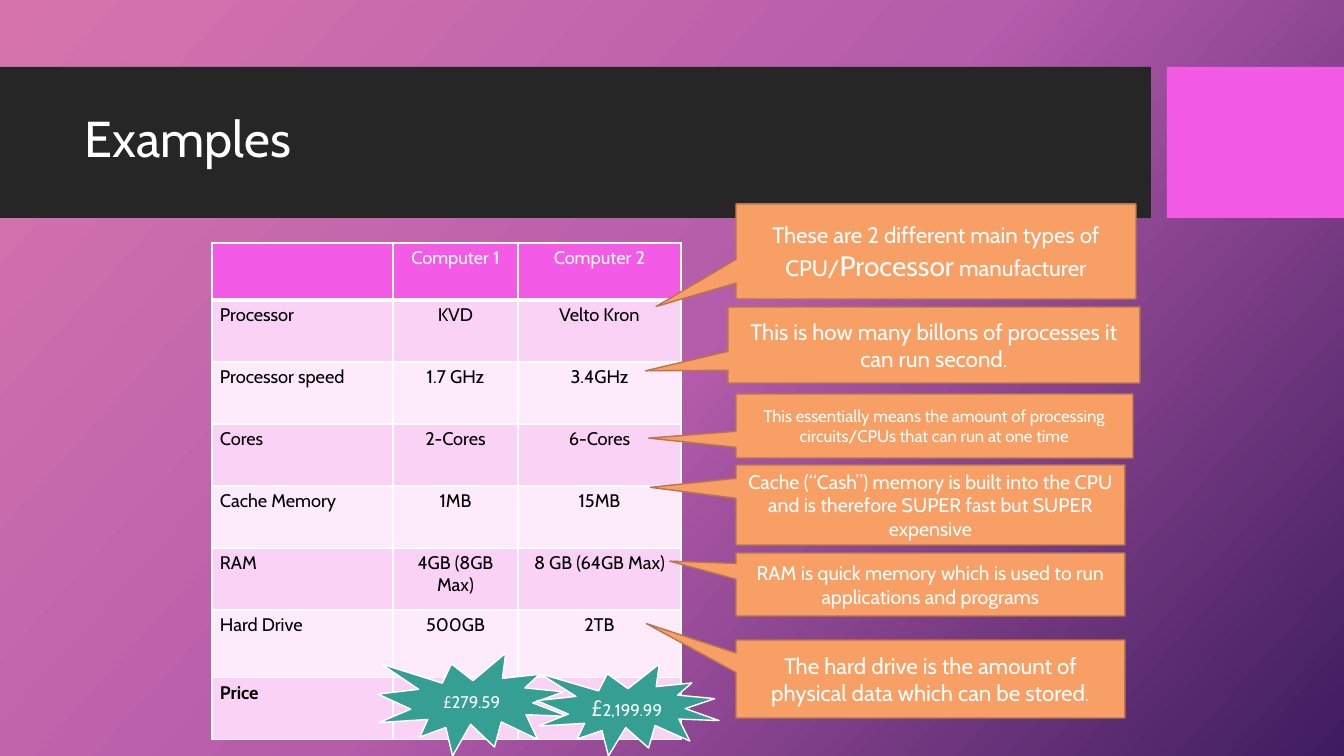
from copy import deepcopy
from dataclasses import dataclass

from lxml import etree
from pptx import Presentation
from pptx import util as u
from pptx.dml.color import RGBColor
from pptx.enum import shapes, text
from pptx.oxml.ns import qn

PX = 914400 / 100.8


@dataclass(frozen=True)
class Theme:
    font: str = "Cabin"
    white: str = "FFFFFF"
    black: str = "000000"
    band: str = "262626"
    pink: str = "F35AE6"
    row_dark: str = "FAD2F5"
    row_light: str = "FDEAFA"
    teal: str = "359F94"
    orange: str = "F89F65"
    orange_line: str = "B7764B"
    backdrop: tuple = ((0, "D774AD"), (0.5, "B55CAB"), (1, "3E1C5F"))
    title: int = 36
    accent: int = 20
    large: int = 16
    medium: int = 14
    table: int = 13
    small: int = 12


T = Theme()

ROWS = [
    ("", "Computer 1", "Computer 2"),
    ("Processor", "KVD", "Velto Kron"),
    ("Processor speed", "1.7 GHz", "3.4GHz"),
    ("Cores", "2-Cores", "6-Cores"),
    ("Cache Memory", "1MB", "15MB"),
    ("RAM", "4GB (8GB Max)", "8 GB (64GB Max)"),
    ("Hard Drive", "500GB", "2TB"),
    ("Price", "", ""),
]
COL_WIDTHS = [181, 125, 163]
ROW_HEIGHTS = [57] + [62] * 5 + [68, 62]

PRICES = [
    ((378, 653, 190, 103), [("£279.59", T.small)]),
    ((537, 664, 182, 92), [("£", T.large), ("2,199.99", T.small)]),
]

CALLOUTS = [
    ((736, 204, 400, 95), (-0.7, 0.58),
     [("These are 2 different main types of CPU/", T.large),
      ("Processor", T.accent), (" manufacturer", T.large)]),
    ((728, 307, 412, 76), (-0.7, 0.34),
     [("This is how many billons of processes it can run second.", T.large)]),
    ((736, 394, 397, 64), (-0.72, 0.19),
     [("This essentially means the amount of processing circuits/CPUs "
       "that can run at one time", T.small)]),
    ((736, 465, 389, 80), (-0.72, -0.22),
     [("Cache (“Cash”) memory is built into the CPU and is therefore "
       "SUPER fast but SUPER expensive", T.medium)]),
    ((736, 553, 389, 63), (-0.67, -0.37),
     [("RAM is quick memory which is used to run applications "
       "and programs", T.medium)]),
    ((736, 640, 389, 78), (-0.73, -0.71),
     [("The hard drive is the amount of physical data which can be "
       "stored.", T.large)]),
]


def px(n):
    return u.Emu(round(n * PX))


def rgb(color):
    return RGBColor.from_string(color)


def write(tf, runs, color=T.white, align=text.PP_ALIGN.CENTER, bold=False):
    tf.word_wrap = True
    p = tf.paragraphs[0]
    p.alignment = align
    for words, size in runs:
        r = p.add_run()
        r.text = words
        r.font.name = T.font
        r.font.size = u.Pt(size)
        r.font.bold = bold
        r.font.color.rgb = rgb(color)
    return p


def add_backdrop(s):
    fill = s.background.fill
    fill.gradient()
    fill.gradient_angle = 318
    stops = s._element.find(".//" + qn("a:gsLst"))
    stops.insert(1, deepcopy(stops[0]))
    for stop, (position, color) in zip(fill.gradient_stops, T.backdrop):
        stop.position = position
        stop.color.rgb = rgb(color)


def add_block(s, kind, box, fill, line=None, runs=(), adj=()):
    sp = s.shapes.add_shape(kind, *map(px, box))
    sp.shadow.inherit = False
    sp.fill.solid()
    sp.fill.fore_color.rgb = rgb(fill)
    if line:
        sp.line.color.rgb = rgb(line)
        sp.line.width = u.Pt(1)
    else:
        sp.line.fill.background()
    for i, value in enumerate(adj):
        sp.adjustments[i] = value
    if runs:
        sp.text_frame.vertical_anchor = text.MSO_ANCHOR.MIDDLE
        write(sp.text_frame, runs)


def add_title(s, box, words):
    tf = s.shapes.add_textbox(*map(px, box)).text_frame
    tf.vertical_anchor = text.MSO_ANCHOR.MIDDLE
    p = write(tf, [(words, T.title)], align=text.PP_ALIGN.LEFT)
    p.line_spacing = 0.9


def set_borders(cell, bottom):
    tc_pr = cell._tc.get_or_add_tcPr()
    for i, (side, width) in enumerate(zip("LRTB", (1, 1, 1, bottom))):
        ln = etree.Element(qn("a:ln" + side), w=str(u.Pt(width)))
        solid = etree.SubElement(ln, qn("a:solidFill"))
        etree.SubElement(solid, qn("a:srgbClr"), val=T.white)
        tc_pr.insert(i, ln)


def fill_cell(cell, row, col, words):
    header = row == 0
    cell.margin_left = cell.margin_right = px(8)
    cell.margin_top = cell.margin_bottom = px(4)
    cell.fill.solid()
    body = T.row_dark if row % 2 else T.row_light
    cell.fill.fore_color.rgb = rgb(T.pink if header else body)
    set_borders(cell, 3 if header else 1)
    if words:
        write(cell.text_frame, [(words, T.table)],
              color=T.white if header else T.black,
              align=text.PP_ALIGN.CENTER if col else text.PP_ALIGN.LEFT,
              bold=words == "Price")


def add_comparison(s, left, top):
    tbl = s.shapes.add_table(
        len(ROWS), len(COL_WIDTHS), px(left), px(top),
        px(sum(COL_WIDTHS)), px(sum(ROW_HEIGHTS))).table
    tbl.first_row = tbl.horz_banding = False
    for column, width in zip(tbl.columns, COL_WIDTHS):
        column.width = px(width)
    for i, (height, values) in enumerate(zip(ROW_HEIGHTS, ROWS)):
        tbl.rows[i].height = px(height)
        for j, words in enumerate(values):
            fill_cell(tbl.cell(i, j), i, j, words)


def main():
    prs = Presentation()
    prs.slide_width, prs.slide_height = px(1344), px(756)
    s = prs.slides.add_slide(prs.slide_layouts[6])
    kinds = shapes.MSO_SHAPE

    add_backdrop(s)
    add_block(s, kinds.RECTANGLE, (0, 67, 1151, 151), T.band)
    add_block(s, kinds.RECTANGLE, (1167, 67, 177, 151), T.pink)
    add_title(s, (75, 82, 1059, 119), "Examples")
    add_comparison(s, 212, 243)
    for box, runs in PRICES:
        add_block(s, kinds.EXPLOSION1, box, T.teal, T.white, runs)
    for box, tip, runs in CALLOUTS:
        add_block(s, kinds.RECTANGULAR_CALLOUT, box, T.orange,
                  T.orange_line, runs, tip)

    prs.save("out.pptx")


if __name__ == "__main__":
    main()
